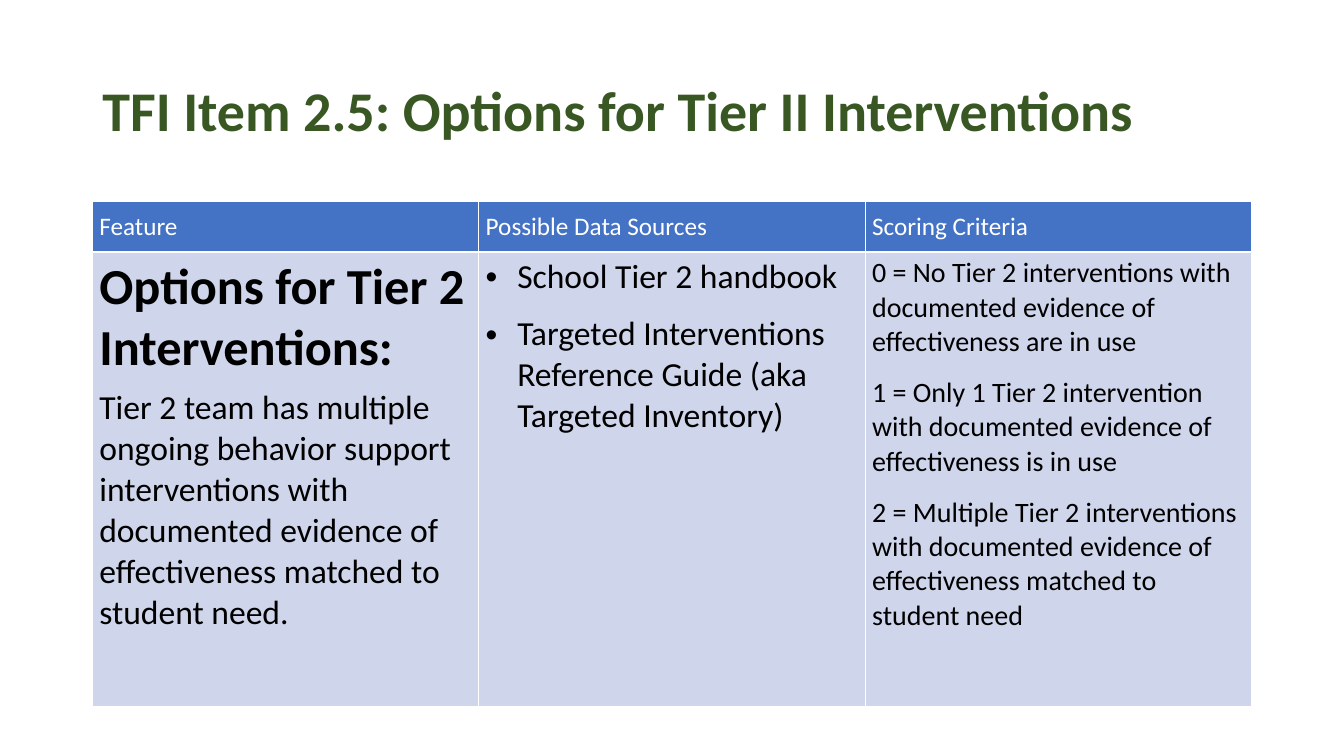
from lxml.etree import SubElement
from pptx import Presentation
from pptx.dml.color import RGBColor
from pptx.enum.text import MSO_ANCHOR, PP_ALIGN
from pptx.oxml.ns import qn
from pptx.util import Pt

COLORS = {"title": "385723", "header": "4472C4", "body": "CFD5EA",
          "white": "FFFFFF", "black": "000000"}
FONT = "Calibri"
LEFT, WIDTH = 66, 828
BULLET_INDENT = 22.5

HEADERS = ["Feature", "Possible Data Sources", "Scoring Criteria"]
# Each column holds (text, size, bold, space after, bulleted).
COLUMNS = [
    [("Options for Tier 2 Interventions:", 36, True, 6, False),
     ("Tier 2 team has multiple ongoing behavior support interventions with "
      "documented evidence of effectiveness matched to student need.", 24, False, 6, False)],
    [("School Tier 2 handbook", 24, False, 12, True),
     ("Targeted Interventions Reference Guide (aka Targeted Inventory)", 24, False, 12, True)],
    [("0 = No Tier 2 interventions with documented evidence of effectiveness "
      "are in use", 20, False, 12, False),
     ("1 = Only 1 Tier 2 intervention with documented evidence of effectiveness "
      "is in use", 20, False, 12, False),
     ("2 = Multiple Tier 2 interventions with documented evidence of effectiveness "
      "matched to student need", 20, False, 12, False)],
]


def style_font(paragraph, size, color, bold=False):
    paragraph.font.name = FONT
    paragraph.font.size = Pt(size)
    paragraph.font.bold = bold
    paragraph.font.color.rgb = RGBColor.from_string(COLORS[color])


def style_cell(cell, fill):
    """Set the margins, white borders and fill of a cell."""
    cell.margin_left = cell.margin_right = Pt(5)
    cell.margin_top = cell.margin_bottom = Pt(3)
    properties = cell._tc.get_or_add_tcPr()
    for side in ("L", "R", "T", "B"):
        line = SubElement(properties, qn(f"a:ln{side}"), w=str(Pt(1)))
        line_fill = SubElement(line, qn("a:solidFill"))
        SubElement(line_fill, qn("a:srgbClr"), val=COLORS["white"])
    cell.fill.solid()
    cell.fill.fore_color.rgb = RGBColor.from_string(COLORS[fill])


presentation = Presentation()
presentation.slide_width, presentation.slide_height = Pt(960), Pt(540)
slide = presentation.slides.add_slide(presentation.slide_layouts[5])

title = slide.shapes.title
title.left, title.top, title.width, title.height = Pt(LEFT), Pt(28.75), Pt(WIDTH), Pt(104.4)
title.text_frame.text = "TFI Item 2.5: Options for Tier II Interventions"
title.text_frame.vertical_anchor = MSO_ANCHOR.MIDDLE
title_paragraph = title.text_frame.paragraphs[0]
title_paragraph.alignment = PP_ALIGN.LEFT
title_paragraph.line_spacing = 0.9
style_font(title_paragraph, 40, "title", bold=True)

table = slide.shapes.add_table(2, 3, Pt(LEFT), Pt(144), Pt(WIDTH), Pt(360.7)).table
table.rows[0].height, table.rows[1].height = Pt(36), Pt(324.7)

for column, (header, entries) in enumerate(zip(HEADERS, COLUMNS)):
    table.columns[column].width = Pt(WIDTH / 3)

    header_cell = table.cell(0, column)
    style_cell(header_cell, "header")
    header_cell.vertical_anchor = MSO_ANCHOR.MIDDLE
    header_cell.text = header
    style_font(header_cell.text_frame.paragraphs[0], 18, "white")

    body_cell = table.cell(1, column)
    style_cell(body_cell, "body")
    body_cell.text = "\n".join(entry[0] for entry in entries)
    for paragraph, entry in zip(body_cell.text_frame.paragraphs, entries):
        _, size, bold, space_after, bulleted = entry
        paragraph.space_after = Pt(space_after)
        if bulleted:
            properties = paragraph._p.get_or_add_pPr()
            properties.set("marL", str(Pt(BULLET_INDENT)))
            properties.set("indent", str(-Pt(BULLET_INDENT)))
            SubElement(properties, qn("a:buFont"), typeface="Arial")
            SubElement(properties, qn("a:buChar"), char="•")
        style_font(paragraph, size, "black", bold)

presentation.save("out.pptx")
